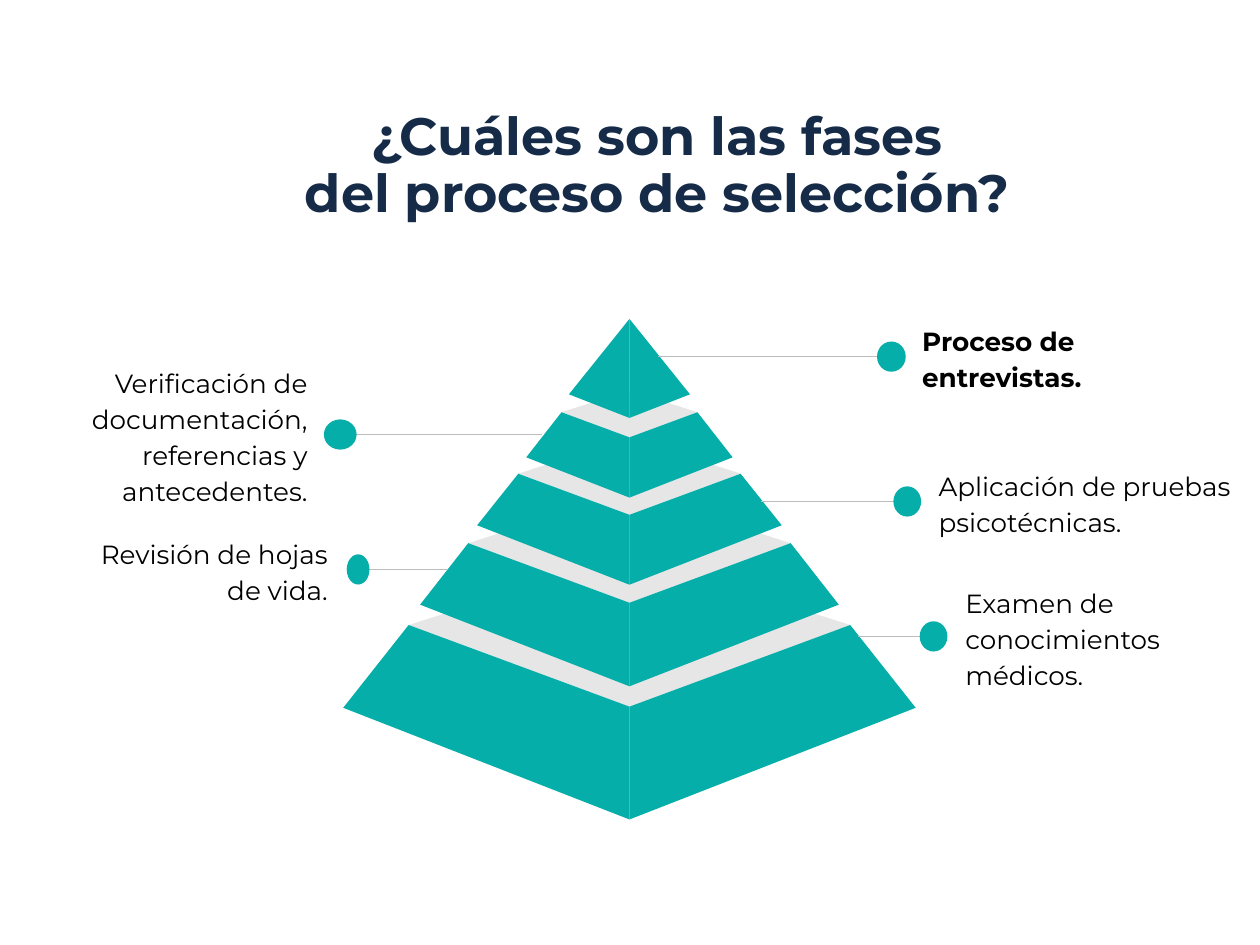
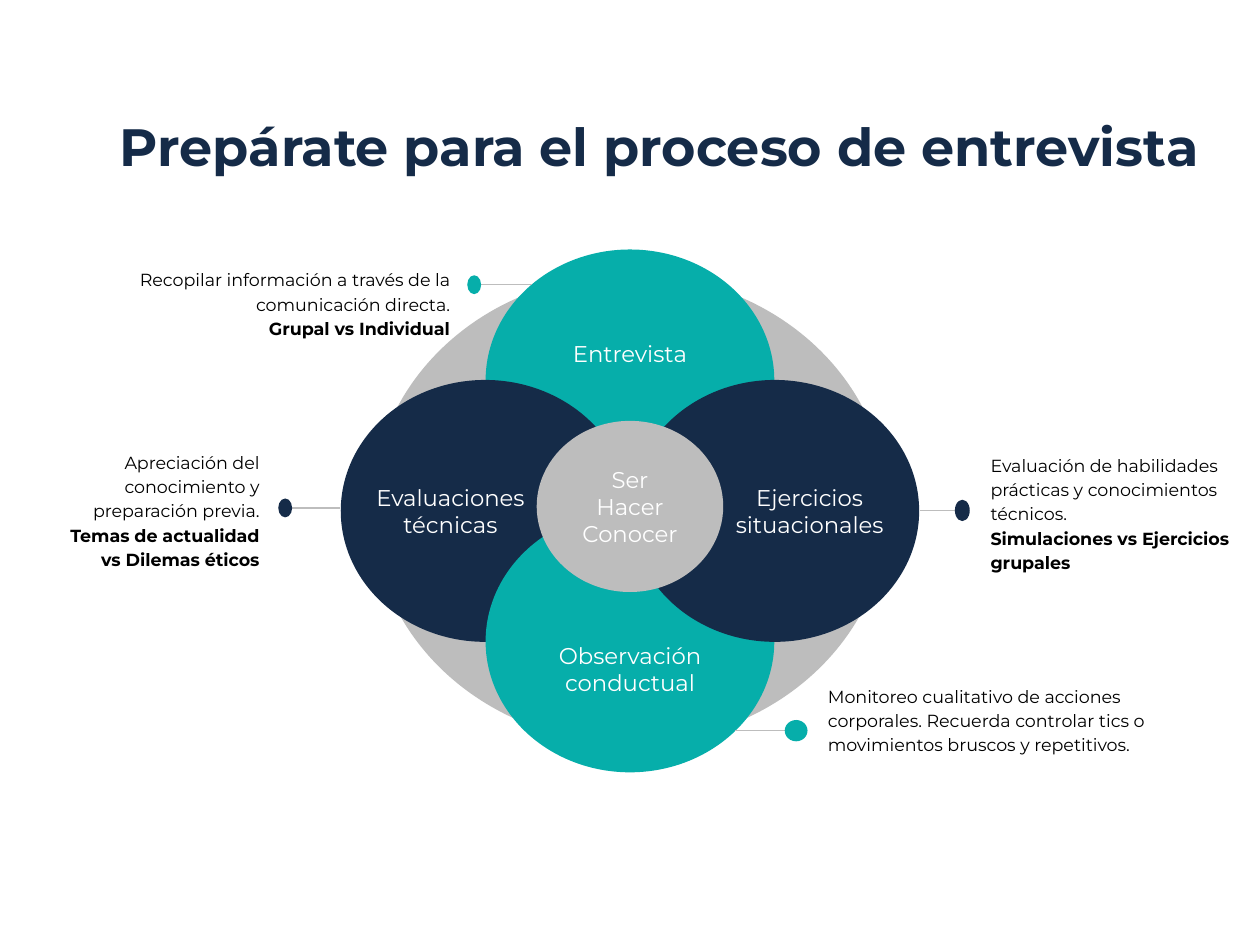
from dataclasses import dataclass

from lxml.etree import SubElement
from pptx import Presentation
from pptx.dml.color import RGBColor
from pptx.enum.shapes import MSO_CONNECTOR, MSO_SHAPE
from pptx.enum.text import MSO_ANCHOR, PP_ALIGN
from pptx.oxml.ns import qn
from pptx.util import Cm, Pt


@dataclass(frozen=True)
class Theme:
    font: str = "Montserrat"
    navy: str = "152B48"
    teal: str = "06AEAA"
    grey: str = "BDBDBD"
    lid: str = "E7E6E6"
    white: str = "FFFFFF"
    black: str = "000000"
    title_size: int = 30
    phase_size: int = 15
    petal_size: int = 13
    note_size: int = 10
    rule_width: float = 0.75


THEME = Theme()
NEVER_BOLD = 99


@dataclass
class Callout:
    """A label, a dot and a rule at height y that runs from the dot to reach."""
    paragraphs: list
    y: float
    reach: float
    dot_left: float
    dot_width: float
    label_left: float
    label_width: float
    label_height: float = 2.31
    label_shift: float = 0
    dot_height: float = 0.61
    colour: str = THEME.teal
    size: int = THEME.phase_size
    margin: float = 0.33
    bold_from: int = NEVER_BOLD

    @property
    def dot_centre(self):
        return self.dot_left + self.dot_width / 2


# Half width and height of the upper edge, then of the lower edge, in cm
PYRAMID_LEVELS = [
    (0, 6.43, 1.22, 7.95),
    (1.37, 8.31, 2.08, 9.22),
    (2.24, 9.55, 3.07, 10.59),
    (3.25, 10.95, 4.22, 12.19),
    (4.45, 12.6, 5.77, 14.27),
]
PYRAMID_AXIS = 12.69
UPPER_DROP, LOWER_DROP, LID_RISE = 0.37, 0.39, 0.32

PHASES = [
    Callout(["Revisión de hojas de vida."], 11.48, 9.04, 6.99, 0.46, 1.4, 5.54),
    Callout(["Aplicación de pruebas psicotécnicas."],
            10.11, 15.34, 18.01, 0.56, 18.59, 6.58),
    Callout(["Proceso de entrevistas."], 7.19, 13.26, 17.68, 0.58, 18.26, 6.32,
            bold_from=0),
    Callout(["Verificación de documentación, referencias y antecedentes."],
            8.76, 10.92, 6.53, 0.66, 0, 6.53),
    Callout(["Examen de conocimientos médicos."],
            12.83, 17.3, 18.54, 0.56, 19.13, 6.78),
]

NOTE_STYLE = dict(size=THEME.note_size, margin=0.46, bold_from=1)
NOTES = [
    Callout(["Apreciación del conocimiento y preparación previa.",
             "Temas de actualidad vs Dilemas éticos"],
            10.24, 6.86, 5.61, 0.28, 0.86, 4.83, 2.0, 0.03, 0.38,
            THEME.navy, **NOTE_STYLE),
    Callout(["Recopilar información a través de la comunicación directa.",
             "Grupal vs Individual"],
            5.74, 10.72, 9.42, 0.28, 1.12, 8.41, 2.64, 0.36, 0.38, **NOTE_STYLE),
    Callout(["Evaluación de habilidades prácticas y conocimientos técnicos.",
             "Simulaciones vs Ejercicios grupales"],
            10.29, 18.54, 19.25, 0.3, 19.51, 5.94, 1.65, 0.04, 0.43,
            THEME.navy, **NOTE_STYLE),
    Callout(["Monitoreo cualitativo de acciones corporales. "
             "Recuerda controlar tics o movimientos bruscos y repetitivos."],
            14.73, 14.81, 15.82, 0.46, 16.23, 8.31, 2.16, -0.24, 0.43, **NOTE_STYLE),
]

# Label, direction across, direction down, colour
PETALS = [
    ("Entrevista", 0, -1, THEME.teal),
    ("Evaluaciones técnicas", -1, 0, THEME.navy),
    ("Observación conductual", 0, 1, THEME.teal),
    ("Ejercicios situacionales", 1, 0, THEME.navy),
]


def write(frame, paragraphs, *, size, colour, align=PP_ALIGN.LEFT, spacing=1.0,
          anchor=MSO_ANCHOR.MIDDLE, margins=(0.33, 0.33), bold_from=NEVER_BOLD):
    """Fill a frame; paragraphs from index bold_from on are bold."""
    frame.word_wrap = True
    frame.vertical_anchor = anchor
    frame.margin_left = frame.margin_right = Cm(margins[0])
    frame.margin_top = frame.margin_bottom = Cm(margins[1])
    for index, content in enumerate(paragraphs):
        paragraph = frame.add_paragraph() if index else frame.paragraphs[0]
        paragraph.alignment = align
        paragraph.line_spacing = spacing
        run = paragraph.add_run()
        run.text = content
        run.font.name = THEME.font
        run.font.size = Pt(size)
        run.font.bold = index >= bold_from
        run.font.color.rgb = RGBColor.from_string(colour)


def add_text(slide, left, top, width, height, paragraphs, **style):
    box = slide.shapes.add_textbox(Cm(left), Cm(top), Cm(width), Cm(height))
    write(box.text_frame, paragraphs, **style)


def add_title(slide, left, top, width, height, lines, anchor):
    add_text(slide, left, top, width, height, lines, size=THEME.title_size,
             colour=THEME.navy, align=PP_ALIGN.CENTER, spacing=0.9, anchor=anchor,
             margins=(0.25, 0.13), bold_from=0)


def paint(shape, colour):
    shape.shadow.inherit = False
    shape.fill.solid()
    shape.fill.fore_color.rgb = RGBColor.from_string(colour)
    shape.line.fill.background()


def add_ellipse(slide, centre_x, centre_y, width, height, colour):
    ellipse = slide.shapes.add_shape(
        MSO_SHAPE.OVAL, Cm(centre_x - width / 2), Cm(centre_y - height / 2),
        Cm(width), Cm(height))
    paint(ellipse, colour)
    return ellipse


def add_polygon(slide, points, colour):
    corners = [(Cm(x), Cm(y)) for x, y in points]
    builder = slide.shapes.build_freeform(*corners[0])
    builder.add_line_segments(corners[1:], close=True)
    paint(builder.convert_to_shape(), colour)


def add_rule(slide, start, end, y):
    rule = slide.shapes.add_connector(
        MSO_CONNECTOR.STRAIGHT, Cm(start), Cm(y), Cm(end), Cm(y))
    rule.line.color.rgb = RGBColor.from_string(THEME.grey)
    rule.line.width = Pt(THEME.rule_width)
    SubElement(rule.element.spPr, qn("a:effectLst"))


def add_callout(slide, callout):
    add_rule(slide, callout.reach, callout.dot_centre, callout.y)
    add_ellipse(slide, callout.dot_centre, callout.y, callout.dot_width,
                callout.dot_height, callout.colour)
    on_left = callout.dot_centre < callout.reach
    top = callout.y + callout.label_shift - callout.label_height / 2
    add_text(slide, callout.label_left, top, callout.label_width,
             callout.label_height, callout.paragraphs, size=callout.size,
             colour=THEME.black, spacing=1.15,
             align=PP_ALIGN.RIGHT if on_left else PP_ALIGN.LEFT,
             margins=(callout.margin, callout.margin), bold_from=callout.bold_from)


def add_pyramid(slide):
    """Draw the lids first, so that the faces of the level above cover them."""
    for half, y, _, _ in reversed(PYRAMID_LEVELS[1:]):
        add_polygon(slide, [(PYRAMID_AXIS - half, y),
                            (PYRAMID_AXIS, y + half * UPPER_DROP),
                            (PYRAMID_AXIS + half, y),
                            (PYRAMID_AXIS, y - half * LID_RISE)], THEME.lid)
    for upper, upper_y, lower, lower_y in PYRAMID_LEVELS:
        for side in (-1, 1):
            face = [(PYRAMID_AXIS, upper_y + upper * UPPER_DROP),
                    (PYRAMID_AXIS, lower_y + lower * LOWER_DROP),
                    (PYRAMID_AXIS + side * lower, lower_y)]
            if upper:
                face.append((PYRAMID_AXIS + side * upper, upper_y))
            add_polygon(slide, face, THEME.teal)


def add_flower(slide):
    """Draw the ring, four overlapping petals and the core."""
    centre_x, centre_y = 12.7, 10.3
    label_width, label_height = 4.01, 1.7
    label_style = dict(size=THEME.petal_size, colour=THEME.white,
                       align=PP_ALIGN.CENTER)
    add_ellipse(slide, centre_x, 10.26, 10.41, 9.45, THEME.grey)
    for label, across, down, colour in PETALS:
        add_ellipse(slide, centre_x + across * 2.92, centre_y + down * 2.63,
                    5.82, 5.28, colour)
        add_text(slide, centre_x + across * 3.62 - label_width / 2,
                 centre_y + down * 3.18 - label_height / 2,
                 label_width, label_height, [label], **label_style)
    core = add_ellipse(slide, centre_x, 10.21, 3.76, 3.45, THEME.grey)
    write(core.text_frame, ["Ser", "Hacer", "Conocer"], **label_style)


def build_phases(slide):
    add_title(slide, 2.34, 1.68, 21.82, 3.38,
              ["¿Cuáles son las fases", "del proceso de selección?"],
              MSO_ANCHOR.MIDDLE)
    add_pyramid(slide)
    for phase in PHASES:
        add_callout(slide, phase)


def build_interview(slide):
    add_title(slide, 1.8, 2.31, 22.99, 1.27,
              ["Prepárate para el proceso de entrevista"], MSO_ANCHOR.TOP)
    add_flower(slide)
    for note in NOTES:
        add_callout(slide, note)


def main():
    deck = Presentation()
    deck.slide_width, deck.slide_height = Cm(25.4), Cm(19.05)
    blank = deck.slide_layouts[6]
    for build in (build_phases, build_interview):
        build(deck.slides.add_slide(blank))
    deck.save("out.pptx")


if __name__ == "__main__":
    main()
